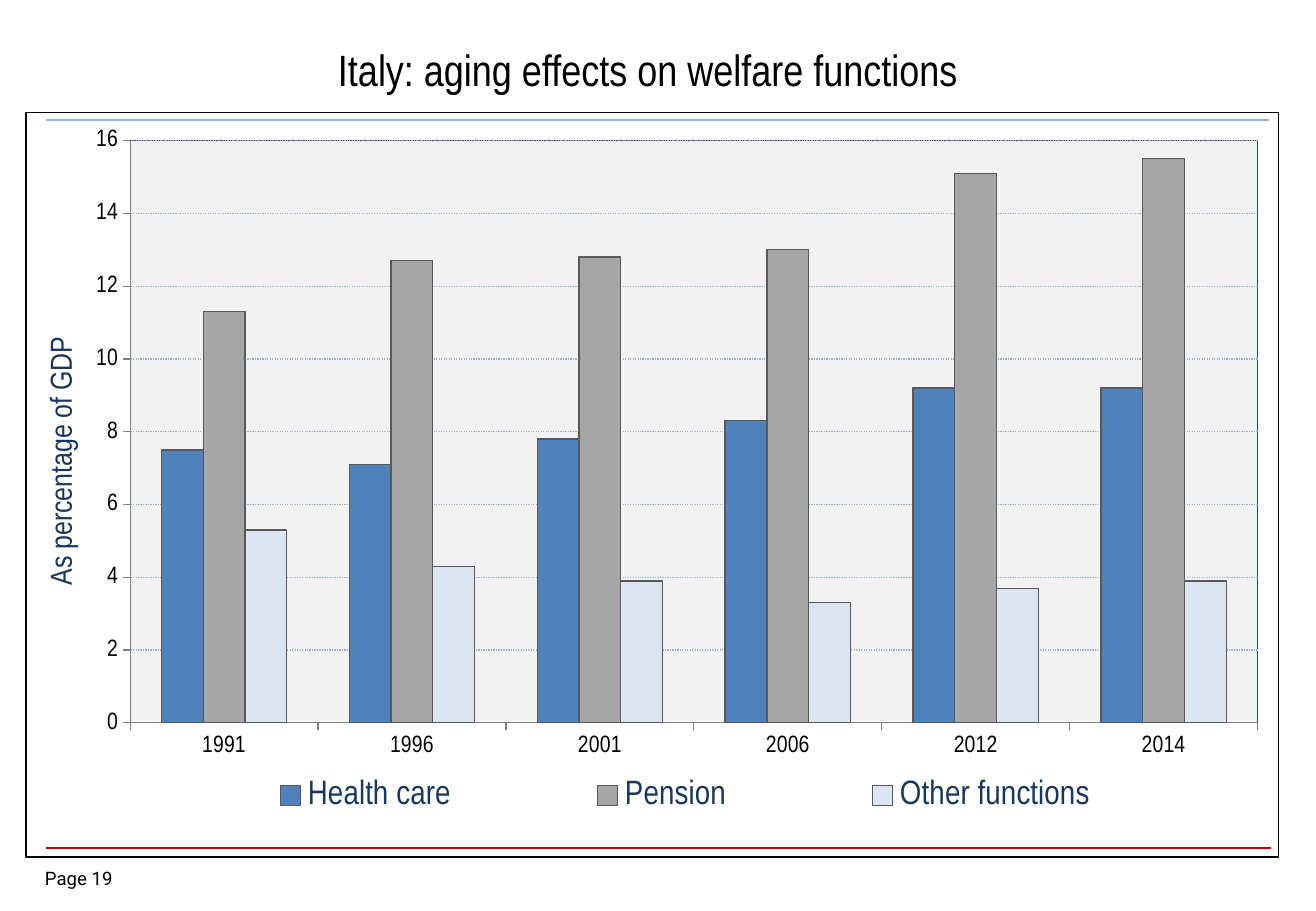
from dataclasses import dataclass

from lxml.etree import SubElement
from pptx import Presentation
from pptx.chart.data import CategoryChartData
from pptx.dml.color import RGBColor
from pptx.enum.chart import XL_CHART_TYPE, XL_LEGEND_POSITION, XL_TICK_MARK
from pptx.enum.dml import MSO_LINE
from pptx.enum.shapes import MSO_CONNECTOR
from pptx.enum.text import MSO_ANCHOR, PP_ALIGN
from pptx.oxml import parse_xml
from pptx.oxml.ns import nsdecls, qn
from pptx.util import Inches, Pt

COLORS = {
    "black": "000000", "navy": "17375E", "rule_red": "C00000", "rule_blue": "8EB4E3",
    "health": "4F81BD", "pension": "A6A6A6", "other": "DCE6F2", "outline": "595959",
    "grid": "95B3D7", "plot": "F2F2F2", "border": "1F497D", "axis": "808080",
}
NARROW = "Arial Narrow"
YEARS = ("1991", "1996", "2001", "2006", "2012", "2014")


@dataclass(frozen=True)
class Rule:
    top: float
    right: float
    color: str
    weight: float


@dataclass(frozen=True)
class Label:
    text: str
    box: tuple[float, float, float, float]
    size: int
    font: str
    align: PP_ALIGN
    anchor: MSO_ANCHOR


@dataclass(frozen=True)
class Spending:
    name: str
    color: str
    values: tuple[float, ...]


RULES = (Rule(6.98, 10.46, "rule_red", 1), Rule(0.99, 10.44, "rule_blue", 1.5))
LABELS = (
    Label("Page 19", (0.37, 7.14, 0.73, 0.22), 11, "Roboto", PP_ALIGN.LEFT, MSO_ANCHOR.TOP),
    Label("Italy: aging effects on welfare functions", (0.47, 0.21, 9.73, 0.71),
          26, NARROW, PP_ALIGN.CENTER, MSO_ANCHOR.MIDDLE),
)
SPENDING = (
    Spending("Health care", "health", (7.5, 7.1, 7.8, 8.3, 9.2, 9.2)),
    Spending("Pension", "pension", (11.3, 12.7, 12.8, 13, 15.1, 15.5)),
    Spending("Other functions", "other", (5.3, 4.3, 3.9, 3.3, 3.7, 3.9)),
)


def rgb(name: str) -> RGBColor:
    return RGBColor.from_string(COLORS[name])


def set_font(font, size: float, name: str, color: str) -> None:
    font.size = Pt(size)
    font.name = name
    font.bold = False
    font.color.rgb = rgb(color)


def set_line(line, color: str, weight: float = 0.75) -> None:
    line.color.rgb = rgb(color)
    line.width = Pt(weight)


def add_rule(slide, rule: Rule) -> None:
    connector = slide.shapes.add_connector(
        MSO_CONNECTOR.STRAIGHT, Inches(0.38), Inches(rule.top),
        Inches(rule.right), Inches(rule.top))
    set_line(connector.line, rule.color, rule.weight)
    SubElement(connector._element.spPr, qn("a:effectLst"))


def add_label(slide, label: Label) -> None:
    frame = slide.shapes.add_textbox(*map(Inches, label.box)).text_frame
    frame.word_wrap = True
    frame.margin_left = frame.margin_right = frame.margin_top = frame.margin_bottom = 0
    frame.vertical_anchor = label.anchor
    paragraph = frame.paragraphs[0]
    paragraph.text = label.text
    paragraph.alignment = label.align
    set_font(paragraph.font, label.size, label.font, "black")


def set_layout(parent, index: int, target: str = "", **place: float) -> None:
    for layout in parent.findall(qn("c:layout")):
        parent.remove(layout)
    values = {"layoutTarget": target} if target else {}
    values |= {"xMode": "edge", "yMode": "edge"} | place
    entries = "".join(f'<c:{key} val="{value}"/>' for key, value in values.items())
    parent.insert(index, parse_xml(
        f'<c:layout {nsdecls("c")}><c:manualLayout>{entries}</c:manualLayout></c:layout>'))


def area_format(fill: str, line_color: str):
    return parse_xml(
        f'<c:spPr {nsdecls("c", "a")}>{fill}<a:ln w="9525"><a:solidFill>'
        f'<a:srgbClr val="{COLORS[line_color]}"/></a:solidFill></a:ln></c:spPr>')


def style_axis(axis) -> None:
    axis.major_tick_mark = XL_TICK_MARK.OUTSIDE
    axis.minor_tick_mark = XL_TICK_MARK.NONE
    set_font(axis.tick_labels.font, 14, NARROW, "black")
    set_line(axis.format.line, "axis")


def style_value_axis(axis) -> None:
    axis.minimum_scale, axis.maximum_scale, axis.major_unit = 0, 16, 2
    axis.has_major_gridlines = True
    set_line(axis.major_gridlines.format.line, "grid")
    axis.major_gridlines.format.line.dash_style = MSO_LINE.ROUND_DOT
    paragraph = axis.axis_title.text_frame.paragraphs[0]
    paragraph.text = "As percentage of GDP"
    set_font(paragraph.font, 18, NARROW, "navy")
    set_layout(axis.axis_title._element, 1, x=0.012, y=0.294)


def add_spending_chart(slide) -> None:
    data = CategoryChartData()
    data.categories = YEARS
    for spending in SPENDING:
        data.add_series(spending.name, spending.values)
    chart = slide.shapes.add_chart(
        XL_CHART_TYPE.COLUMN_CLUSTERED, Inches(0.21), Inches(0.92),
        Inches(10.32), Inches(6.14), data).chart
    set_font(chart.font, 10, "Calibri", "black")
    chart.has_title = False
    plot = chart.plots[0]
    plot.gap_width = 150
    plot.overlap = 0
    plot.vary_by_categories = False
    for series, spending in zip(plot.series, SPENDING):
        series.format.fill.solid()
        series.format.fill.fore_color.rgb = rgb(spending.color)
        set_line(series.format.line, "outline")
    style_axis(chart.category_axis)
    style_axis(chart.value_axis)
    style_value_axis(chart.value_axis)

    chart.has_legend = True
    chart.legend.position = XL_LEGEND_POSITION.RIGHT
    chart.legend.include_in_layout = False
    set_font(chart.legend.font, 20, NARROW, "navy")
    set_layout(chart.legend._element, 1, x=0.095, y=0.878, w=0.862, h=0.08)

    chart_element = chart.element.find(qn("c:chart"))
    plot_area = chart_element.find(qn("c:plotArea"))
    set_layout(plot_area, 0, "inner", x=0.083, y=0.038, w=0.9, h=0.782)
    plot_fill = f'<a:solidFill><a:srgbClr val="{COLORS["plot"]}"/></a:solidFill>'
    plot_area.append(area_format(plot_fill, "border"))
    chart_element.addnext(area_format("<a:noFill/>", "black"))


def main() -> None:
    presentation = Presentation()
    presentation.slide_width = Inches(10.83)
    presentation.slide_height = Inches(7.5)
    slide = presentation.slides.add_slide(presentation.slide_layouts[6])
    for rule in RULES:
        add_rule(slide, rule)
    for label in LABELS:
        add_label(slide, label)
    add_spending_chart(slide)
    presentation.save("out.pptx")


if __name__ == "__main__":
    main()
